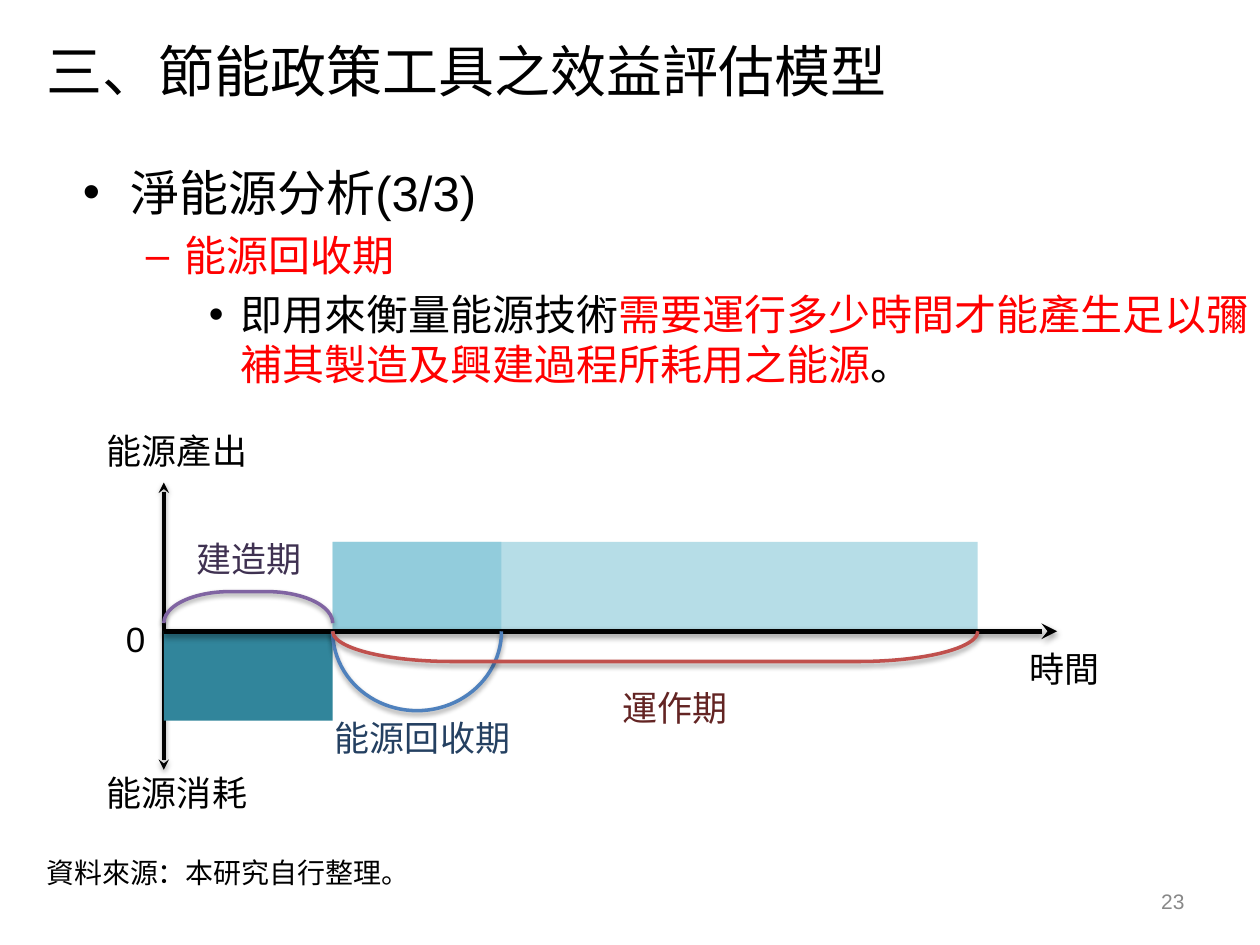
from lxml import etree
from pptx import Presentation
from pptx.dml.color import RGBColor
from pptx.enum.shapes import MSO_CONNECTOR, MSO_SHAPE
from pptx.enum.text import MSO_ANCHOR, PP_ALIGN
from pptx.oxml.ns import qn
from pptx.util import Inches, Pt

LINE = MSO_CONNECTOR.STRAIGHT
RECT, BRACKET = MSO_SHAPE.RECTANGLE, MSO_SHAPE.LEFT_BRACKET
TOP, MIDDLE = MSO_ANCHOR.TOP, MSO_ANCHOR.MIDDLE
LEFT, RIGHT = PP_ALIGN.LEFT, PP_ALIGN.RIGHT

BLACK = RGBColor(0x00, 0x00, 0x00)
RED = RGBColor(0xFF, 0x00, 0x00)
GREY = RGBColor(0x88, 0x88, 0x88)
TEAL = RGBColor(0x31, 0x85, 0x9B)
AQUA = RGBColor(0x92, 0xCC, 0xDC)
PALE = RGBColor(0xB6, 0xDD, 0xE7)
BLUE = RGBColor(0x4F, 0x81, 0xBD)
NAVY = RGBColor(0x24, 0x40, 0x61)
PURPLE = RGBColor(0x80, 0x64, 0xA2)
PLUM = RGBColor(0x3F, 0x31, 0x51)
BRICK = RGBColor(0xC0, 0x50, 0x4D)
MAROON = RGBColor(0x63, 0x24, 0x23)

FONT = "Arial"
WIDTH, HEIGHT = Inches(10), Inches(7.5)
COLS, ROWS = 100, 75

# Time line: columns of the phases, row of the axis, rows of a bar
START, BUILT, PAID, END = 13, 26.4, 39.8, 77.6
AXIS, BAR = 50.1, 7.1


def col(n):
    return round(WIDTH * n / COLS)


def row(n):
    return round(HEIGHT * n / ROWS)


def box(x, y, w, h):
    return col(x), row(y), col(w), row(h)


def style(font, size, color):
    font.name, font.size = FONT, Pt(size)
    font.color.rgb = color


def frame(slide, area, anchor=TOP):
    text = slide.shapes.add_textbox(*box(*area)).text_frame
    text.word_wrap = True
    text.vertical_anchor = anchor
    return text


def label(slide, words, area, size=20, color=BLACK, anchor=TOP, align=LEFT):
    para = frame(slide, area, anchor).paragraphs[0]
    para.text = words
    para.alignment = align
    style(para.runs[0].font, size, color)


def bullet(para, mark, color, margin, hang):
    """Give a paragraph a coloured mark and a hanging indent in inches."""
    props = para._p.get_or_add_pPr()
    props.set("marL", str(Inches(margin)))
    props.set("indent", str(-Inches(hang)))
    tint = etree.SubElement(props, qn("a:buClr"))
    etree.SubElement(tint, qn("a:srgbClr"), val=str(color))
    etree.SubElement(props, qn("a:buFont"), typeface=FONT)
    etree.SubElement(props, qn("a:buChar"), char=mark)


def outline(slide, area, items):
    text = frame(slide, area)
    for i, (level, mark, margin, hang, size, runs) in enumerate(items):
        para = text.add_paragraph() if i else text.paragraphs[0]
        para.level = level
        if i:
            para.space_before = Pt(4.8)
        bullet(para, mark, runs[0][1], margin, hang)
        for words, color in runs:
            run = para.add_run()
            run.text = words
            style(run.font, size, color)


def shade(shape):
    """Set a soft shadow that falls straight down."""
    props = shape._element.spPr
    for old in props.findall(qn("a:effectLst")):
        props.remove(old)
    effects = etree.SubElement(props, qn("a:effectLst"))
    drop = etree.SubElement(
        effects, qn("a:outerShdw"), blurRad=str(Pt(3.1)), dist=str(Pt(1.6)),
        dir="5400000", rotWithShape="0")
    tint = etree.SubElement(drop, qn("a:srgbClr"), val=str(BLACK))
    etree.SubElement(tint, qn("a:alpha"), val="38000")


def arrow(slide, x1, y1, x2, y2, width, ends):
    line = slide.shapes.add_connector(LINE, col(x1), row(y1), col(x2), row(y2))
    line.line.color.rgb = BLACK
    line.line.width = Pt(width)
    stroke = line._element.spPr.find(qn("a:ln"))
    for end in ends:
        etree.SubElement(stroke, qn(end), type="stealth")
    shade(line)


def bar(slide, left, right, top, color):
    shape = slide.shapes.add_shape(RECT, *box(left, top, right - left, BAR))
    shape.shadow.inherit = False
    shape.fill.solid()
    shape.fill.fore_color.rgb = color
    shape.line.fill.background()


def brace(slide, left, right, top, depth, turn, bend, color):
    """Turn a bracket so that it spans the columns from left to right."""
    span = right - left
    x = (left + right - depth) / 2
    y = top + (depth - span) / 2
    shape = slide.shapes.add_shape(BRACKET, *box(x, y, depth, span))
    shape.rotation = turn
    shape.adjustments[0] = bend
    shape.fill.background()
    shape.line.color.rgb = color
    shape.line.width = Pt(2)
    shade(shape)


def chart(slide):
    bar(slide, BUILT, END, AXIS - BAR, PALE)
    arrow(slide, START, 38.3, START, 61.1, 2, ["a:headEnd", "a:tailEnd"])
    bar(slide, START, BUILT, AXIS, TEAL)
    bar(slide, BUILT, PAID, AXIS - BAR, AQUA)
    arrow(slide, START, AXIS, 83.9, AXIS, 3, ["a:tailEnd"])
    brace(slide, BUILT, PAID, AXIS, 6.3, 270, 1.66, BLUE)
    brace(slide, START, BUILT, 46.95, 2.5, 90, 2.11, PURPLE)
    brace(slide, BUILT, END, AXIS, 2.4, 270, 3.95, BRICK)
    for words, area, color in [
        ("能源回收期", (25.6, 56.4, 19.7, 3.9), NAVY),
        ("建造期", (14.6, 42.2, 16.5, 4.7), PLUM),
        ("運作期", (48.4, 54, 20.5, 4.7), MAROON),
        ("時間", (80.7, 50.9, 9.4, 5.5), BLACK),
        ("能源消耗", (7.5, 60.7, 24.1, 6.6), BLACK),
        ("能源產出", (7.5, 33.6, 25.2, 4.7), BLACK),
        ("0", (9, 48.5, 2.4, 3), BLACK),
    ]:
        label(slide, words, area, color=color)


def main():
    deck = Presentation()
    deck.slide_width, deck.slide_height = WIDTH, HEIGHT
    slide = deck.slides.add_slide(deck.slide_layouts[6])
    label(slide, "三、節能政策工具之效益評估模型", (2.7, 1.3, 96.1, 8.6), 32,
          anchor=MIDDLE)
    outline(slide, (5.6, 12.4, 94.9, 58.3), [
        (0, "•", 0.38, 0.38, 28, [("淨能源分析(3/3)", BLACK)]),
        (1, "–", 0.81, 0.31, 24, [("能源回收期", RED)]),
        (2, "•", 1.25, 0.25, 24, [
            ("即用來衡量能源技術", BLACK),
            ("需要運行多少時間才能產生足以彌補其製造及興建過程所耗用之能源", RED),
            ("。", BLACK)]),
    ])
    chart(slide)
    label(slide, "資料來源：本研究自行整理。", (2.7, 67.4, 38.6, 3.7), 16)
    label(slide, "23", (71.7, 69.5, 23.3, 4), 12, GREY, MIDDLE, RIGHT)
    deck.save("out.pptx")


if __name__ == "__main__":
    main()
